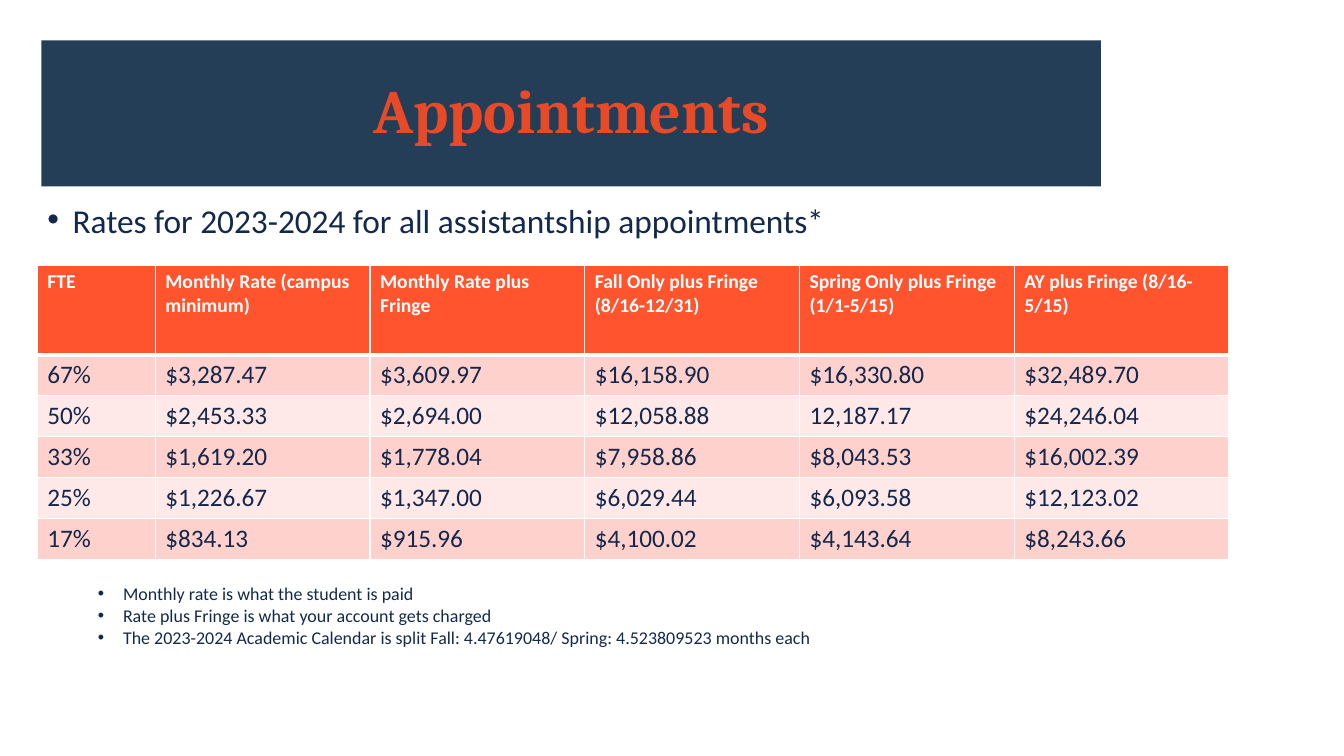
from dataclasses import dataclass

from lxml import etree
from pptx import Presentation
from pptx import util as u
from pptx.dml.color import RGBColor
from pptx.enum import text
from pptx.oxml import ns

NAVY = "13294B"
WHITE = "FFFFFF"
ORANGE = "FF542E"
BANDS = ("FFD1CD", "FFE9E8")


@dataclass
class Bullet:
    wording: str
    size: float
    level: int
    indent: float
    space_before: float


BULLETS = [
    Bullet("Rates for 2023-2024 for all assistantship appointments*", 23.8, 0, 0.25, 0),
    Bullet("Monthly rate is what the student is paid", 12.8, 1, 0.75, 250),
    Bullet("Rate plus Fringe is what your account gets charged", 12.8, 1, 0.75, 5),
    Bullet("The 2023-2024 Academic Calendar is split Fall: 4.47619048/ Spring: 4.523809523 months each",
           12.8, 1, 0.75, 5),
]

RATES = [
    ["FTE", "Monthly Rate (campus minimum)", "Monthly Rate plus Fringe",
     "Fall Only plus Fringe (8/16-12/31)", "Spring Only plus Fringe (1/1-5/15)",
     "AY plus Fringe (8/16-5/15)"],
    ["67%", "$3,287.47", "$3,609.97", "$16,158.90", "$16,330.80", "$32,489.70"],
    ["50%", "$2,453.33", "$2,694.00", "$12,058.88", "12,187.17", "$24,246.04"],
    ["33%", "$1,619.20", "$1,778.04", "$7,958.86", "$8,043.53", "$16,002.39"],
    ["25%", "$1,226.67", "$1,347.00", "$6,029.44", "$6,093.58", "$12,123.02"],
    ["17%", "$834.13", "$915.96", "$4,100.02", "$4,143.64", "$8,243.66"],
]
COLUMN_WIDTHS = [1.17] + [2.13] * 5
ROW_HEIGHTS = [0.89] + [0.36] * 5


def color(value: str) -> RGBColor:
    return RGBColor.from_string(value)


def write(paragraph, wording: str, *, size: float, fill: str = NAVY,
          font: str = "Calibri", bold: bool = False) -> None:
    run = paragraph.add_run()
    run.text = wording
    run.font.size = u.Pt(size)
    run.font.name = font
    run.font.bold = bold
    run.font.color.rgb = color(fill)


def place(shape, left: float, top: float, width: float, height: float) -> None:
    shape.left, shape.top = u.Inches(left), u.Inches(top)
    shape.width, shape.height = u.Inches(width), u.Inches(height)


def draw_title(slide) -> None:
    title = slide.shapes.title
    place(title, 0.41, 0.4, 10.51, 1.45)
    title.fill.solid()
    title.fill.fore_color.rgb = color("253E58")
    title.text_frame.vertical_anchor = text.MSO_ANCHOR.MIDDLE
    paragraph = title.text_frame.paragraphs[0]
    paragraph.alignment = text.PP_ALIGN.CENTER
    paragraph.line_spacing = 0.9
    write(paragraph, "Appointments", size=44, fill="E84A27", font="Cambria", bold=True)


def draw_bullets(slide, bullets: list[Bullet]) -> None:
    body = slide.placeholders[1]
    place(body, 0.37, 2.04, 10.51, 4.53)
    frame = body.text_frame
    frame.auto_size = text.MSO_AUTO_SIZE.NONE
    frame.vertical_anchor = text.MSO_ANCHOR.TOP
    for index, bullet in enumerate(bullets):
        paragraph = frame.add_paragraph() if index else frame.paragraphs[0]
        paragraph.level = bullet.level
        paragraph.line_spacing = 0.7
        paragraph.space_before = u.Pt(bullet.space_before)
        properties = paragraph._p.get_or_add_pPr()
        properties.set("marL", str(u.Inches(bullet.indent)))
        properties.set("indent", str(u.Inches(-0.25)))
        etree.SubElement(properties, ns.qn("a:buFont")).set("typeface", "Arial")
        etree.SubElement(properties, ns.qn("a:buChar")).set("char", "•")
        write(paragraph, bullet.wording, size=bullet.size)


def set_borders(cell, top: float, bottom: float) -> None:
    properties = cell._tc.get_or_add_tcPr()
    sides = {"a:lnL": 1, "a:lnR": 1, "a:lnT": top, "a:lnB": bottom}
    for index, (tag, width) in enumerate(sides.items()):
        line = etree.Element(ns.qn(tag), w=str(u.Pt(width)))
        fill = etree.SubElement(line, ns.qn("a:solidFill"))
        etree.SubElement(fill, ns.qn("a:srgbClr")).set("val", WHITE)
        properties.insert(index, line)


def draw_table(slide, rows: list[list[str]]) -> None:
    frame = slide.shapes.add_table(
        len(rows), len(COLUMN_WIDTHS), u.Inches(0.37), u.Inches(2.63),
        u.Inches(sum(COLUMN_WIDTHS)), u.Inches(sum(ROW_HEIGHTS)))
    table = frame.table
    for column, width in zip(table.columns, COLUMN_WIDTHS):
        column.width = u.Inches(width)
    for row, height in zip(table.rows, ROW_HEIGHTS):
        row.height = u.Inches(height)
    for row_index, values in enumerate(rows):
        header = row_index == 0
        for column_index, value in enumerate(values):
            cell = table.cell(row_index, column_index)
            cell.fill.solid()
            cell.fill.fore_color.rgb = color(ORANGE if header else BANDS[(row_index - 1) % 2])
            set_borders(cell, top=3 if row_index == 1 else 1, bottom=3 if header else 1)
            write(cell.text_frame.paragraphs[0], value, size=14 if header else 18,
                  fill=WHITE if header else "13284B", bold=header)


def main() -> None:
    presentation = Presentation()
    presentation.slide_width = u.Inches(13.33)
    presentation.slide_height = u.Inches(7.5)
    slide = presentation.slides.add_slide(presentation.slide_layouts[1])
    draw_title(slide)
    draw_bullets(slide, BULLETS)
    draw_table(slide, RATES)
    presentation.save("out.pptx")


if __name__ == "__main__":
    main()
